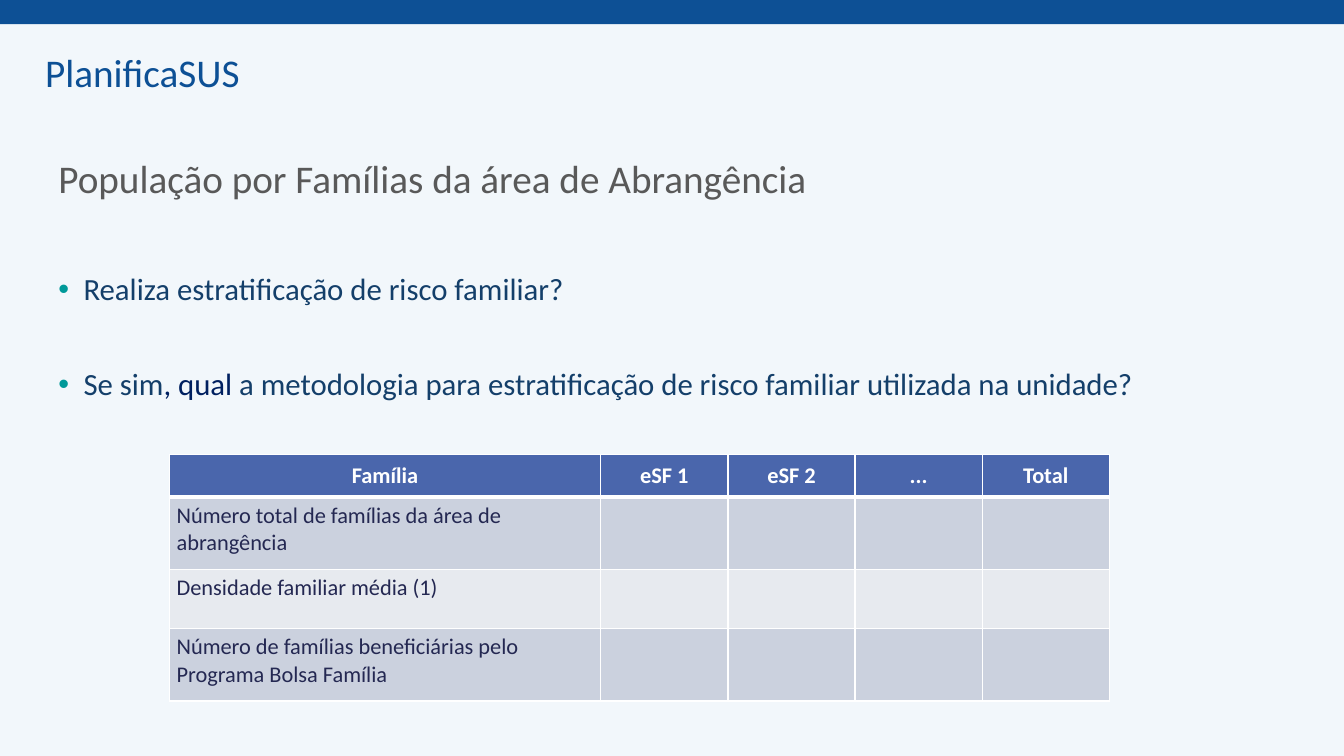
"""Build the PlanificaSUS slide on families in the coverage area."""
from lxml.etree import SubElement
from pptx import Presentation
from pptx.dml.color import RGBColor
from pptx.enum.shapes import MSO_SHAPE
from pptx.enum.text import MSO_ANCHOR, PP_ALIGN
from pptx.oxml.ns import qn
from pptx.util import Pt

COLORS = {
    "background": "F2F7FB", "brand": "0D5095", "title": "595959",
    "body": "143F6A", "emphasis": "002060", "bullet": "009999",
    "header": "4A66AC", "cell": "242852", "white": "FFFFFF",
    "odd": "CBD1DE", "even": "E7EAEF",
}
FONT = "Calibri"
SLIDE_WIDTH, SLIDE_HEIGHT = 960, 540
PROGRAMME = "PlanificaSUS"
TITLE = "População por Famílias da área de Abrangência"
QUESTIONS = [
    [("Realiza estratificação de risco familiar?", "body")],
    [("Se sim", "body"), (", qual ", "emphasis"),
     ("a metodologia para estratificação de risco familiar utilizada na unidade?", "body")],
]
HEADERS = ["Família", "eSF 1", "eSF 2", "...", "Total"]
INDICATORS = [
    "Número total de famílias da área de abrangência",
    "Densidade familiar média (1)",
    "Número de famílias beneficiárias pelo Programa Bolsa Família",
]
COLUMN_WIDTHS = [308.4] + [90.8] * 4
ROW_HEIGHTS = [30, 52, 42, 52]
QUESTION_GAP = 44


def color(name):
    return RGBColor.from_string(COLORS[name])


def write(para, text, *, size, fill, bold=False, align=PP_ALIGN.LEFT, spacing=None):
    para.alignment = align
    if spacing:
        para.line_spacing = spacing
    span = para.add_run()
    span.text = text
    span.font.name = FONT
    span.font.size = Pt(size)
    span.font.bold = bold
    span.font.color.rgb = color(fill)


def add_box(page, left, top, width, height, wrap=True, anchor=MSO_ANCHOR.TOP):
    box = page.shapes.add_textbox(Pt(left), Pt(top), Pt(width), Pt(height))
    frame = box.text_frame
    frame.word_wrap = wrap
    frame.vertical_anchor = anchor
    return frame


def add_bullet(para):
    properties = para._p.get_or_add_pPr()
    properties.set("marL", str(Pt(18)))
    properties.set("indent", str(Pt(-18)))
    bullet_color = SubElement(properties, qn("a:buClr"))
    SubElement(bullet_color, qn("a:srgbClr"), val=COLORS["bullet"])
    SubElement(properties, qn("a:buFont"), typeface="Arial")
    SubElement(properties, qn("a:buChar"), char="•")


def add_borders(cell, top, bottom):
    properties = cell._tc.get_or_add_tcPr()
    for side, width in (("L", 1), ("R", 1), ("T", top), ("B", bottom)):
        line = SubElement(properties, qn(f"a:ln{side}"), w=str(Pt(width)))
        fill = SubElement(line, qn("a:solidFill"))
        SubElement(fill, qn("a:srgbClr"), val=COLORS["white"])


def add_family_table(page):
    rows = [HEADERS] + [[name] + [""] * 4 for name in INDICATORS]
    table = page.shapes.add_table(
        len(rows), len(HEADERS), Pt(120.8), Pt(324.8),
        Pt(sum(COLUMN_WIDTHS)), Pt(sum(ROW_HEIGHTS))).table
    for column, width in zip(table.columns, COLUMN_WIDTHS):
        column.width = Pt(width)
    for number, texts in enumerate(rows):
        table.rows[number].height = Pt(ROW_HEIGHTS[number])
        is_header = number == 0
        band = "header" if is_header else "odd" if number % 2 else "even"
        for cell, text in zip(table.rows[number].cells, texts):
            add_borders(cell, 3 if number == 1 else 1, 3 if is_header else 1)
            cell.fill.solid()
            cell.fill.fore_color.rgb = color(band)
            cell.margin_left = cell.margin_right = Pt(5.4)
            cell.vertical_anchor = MSO_ANCHOR.MIDDLE if is_header else MSO_ANCHOR.TOP
            if text:
                write(cell.text_frame.paragraphs[0], text, size=16, bold=is_header,
                      fill="white" if is_header else "cell",
                      align=PP_ALIGN.CENTER if is_header else PP_ALIGN.LEFT)


def main():
    deck = Presentation()
    deck.slide_width, deck.slide_height = Pt(SLIDE_WIDTH), Pt(SLIDE_HEIGHT)
    page = deck.slides.add_slide(deck.slide_layouts[6])
    page.background.fill.solid()
    page.background.fill.fore_color.rgb = color("background")

    band = page.shapes.add_shape(MSO_SHAPE.RECTANGLE, 0, 0, Pt(SLIDE_WIDTH), Pt(17.2))
    band.shadow.inherit = False
    band.fill.solid()
    band.fill.fore_color.rgb = color("brand")
    band.line.fill.background()

    programme = add_box(page, 25.2, 31, 154.8, 41, wrap=False)
    write(programme.paragraphs[0], PROGRAMME, size=28, fill="brand")
    title = add_box(page, 34.6, 77, 791.3, 104.4, anchor=MSO_ANCHOR.MIDDLE)
    write(title.paragraphs[0], TITLE, size=28, fill="title", spacing=0.9)

    body = add_box(page, 34.6, 192.2, 791.3, 287.3)
    for number, spans in enumerate(QUESTIONS):
        para = body.add_paragraph() if number else body.paragraphs[0]
        add_bullet(para)
        if number:
            para.space_before = Pt(QUESTION_GAP)
        for text, fill in spans:
            write(para, text, size=22, fill=fill, spacing=0.9)

    add_family_table(page)
    deck.save("out.pptx")


if __name__ == "__main__":
    main()
